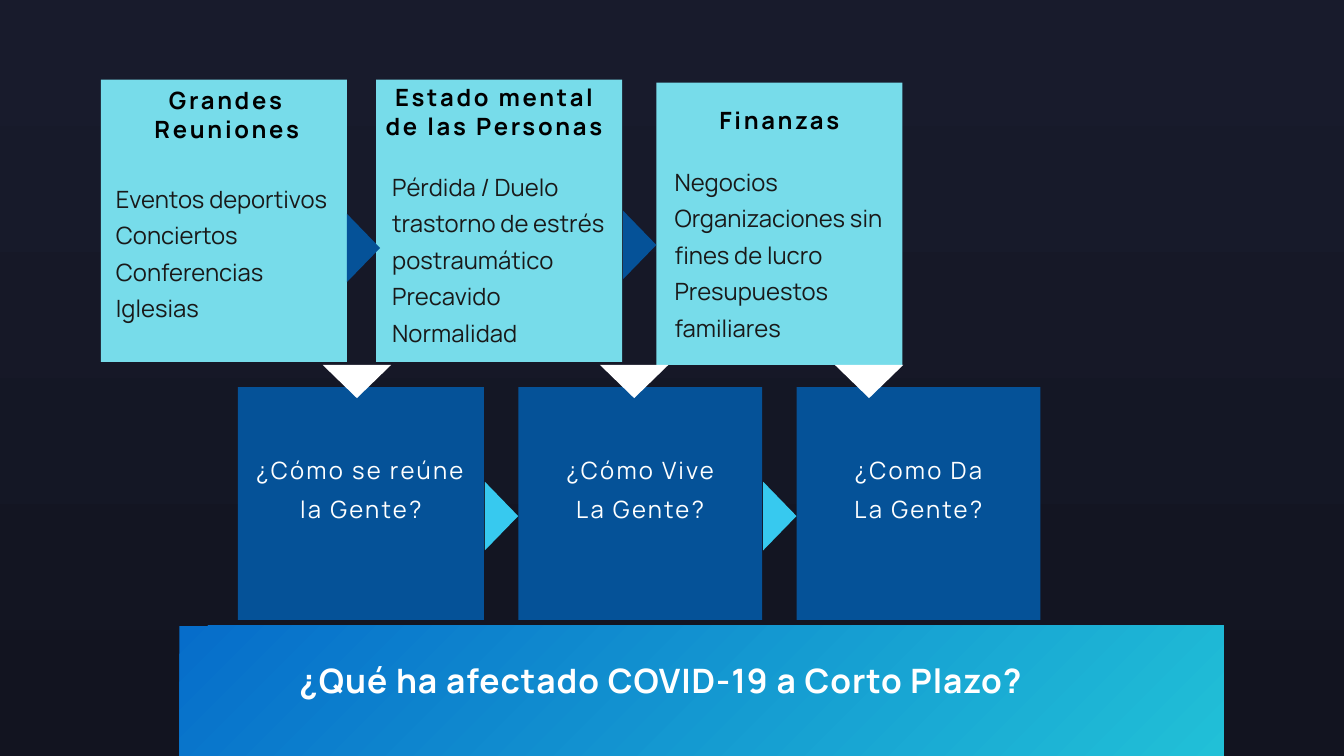
from pptx import Presentation
from pptx.dml.color import RGBColor
from pptx.enum.shapes import MSO_SHAPE
from pptx.enum.text import MSO_ANCHOR, PP_ALIGN
from pptx.util import Inches, Pt

CARD, STEP, ARROW = "77DCEA", "055298", "37C9EF"
WHITE, BLACK, INK = "FFFFFF", "000000", "191919"


def paint(fill, *colors, angle=0):
    """Fill with one colour, or with a two-colour gradient (counter-clockwise angle)."""
    if len(colors) == 1:
        fill.solid()
        fill.fore_color.rgb = RGBColor.from_string(colors[0])
        return
    fill.gradient()
    fill.gradient_angle = angle
    for stop, color in zip(fill.gradient_stops, colors):
        stop.color.rgb = RGBColor.from_string(color)


def write(box, place, lines, color, size=17, bold=False, tracking=0,
          spacing=None, align=PP_ALIGN.LEFT, margins=(0, 0)):
    """Place a text shape and set one paragraph per line; tracking is in points."""
    box.left, box.top, box.width, box.height = [Inches(value) for value in place]
    frame = box.text_frame
    frame.word_wrap = True
    frame.vertical_anchor = MSO_ANCHOR.TOP
    frame.margin_left = frame.margin_right = Inches(margins[0])
    frame.margin_top = frame.margin_bottom = Inches(margins[1])
    frame.text = "\n".join(lines)
    for para in frame.paragraphs:
        para.alignment = align
        para.space_before = Pt(0)
        if spacing:
            para.line_spacing = Pt(spacing)
        font = para.font
        font.name, font.size, font.bold = "Manrope", Pt(size), bold
        font.color.rgb = RGBColor.from_string(color)
        if tracking:
            font._rPr.set("spc", str(round(tracking * 100)))


deck = Presentation()
deck.slide_width, deck.slide_height = Inches(13.33), Inches(7.5)
page = deck.slides.add_slide(deck.slide_layouts[5])
shapes = page.shapes
paint(page.background.fill, "181B2C", "121420", angle=270)

# Panels: three cards, three steps and the banner
panels = [(left, top, 2.44, 2.8, [CARD]) for left, top in ((1, 0.79), (3.73, 0.79), (6.51, 0.82))]
panels += [(left, 3.84, width, 2.31, [STEP]) for left, width in ((2.36, 2.44), (5.14, 2.42), (7.9, 2.42))]
panels.append((1.78, 6.21, 10.36, 1.29, ["066DCA", "21C0D7"]))
for left, top, width, height, colors in panels:
    panel = shapes.add_shape(MSO_SHAPE.RECTANGLE, Inches(left), Inches(top), Inches(width), Inches(height))
    panel.shadow.inherit = False
    panel.line.fill.background()
    paint(panel.fill, *colors, angle=315)

# Pointers, given by their tips
right_tips = [(3.77, 2.46, STEP), (6.51, 2.43, STEP), (5.14, 5.12, ARROW), (7.9, 5.12, ARROW)]
pointers = [([(x - 0.33, y - 0.34), (x, y), (x - 0.33, y + 0.34)], color) for x, y, color in right_tips]
pointers += [([(x - 0.34, 3.62), (x + 0.34, 3.62), (x, 3.95)], WHITE) for x in (3.54, 6.29, 8.62)]
for corners, color in pointers:
    points = [(Inches(x), Inches(y)) for x, y in corners]
    builder = shapes.build_freeform(*points[0])
    builder.add_line_segments(points[1:], close=True)
    pointer = builder.convert_to_shape()
    pointer.shadow.inherit = False
    pointer.line.fill.background()
    paint(pointer.fill, color)

heading = dict(color=BLACK, bold=True, tracking=1.9, align=PP_ALIGN.CENTER)
items = dict(color=INK, spacing=26.1)
question = dict(color=WHITE, tracking=1.6, spacing=28.1, align=PP_ALIGN.CENTER)
texts = [
    ((1.15, 0.85, 2.2, 0.57), ["Grandes Reuniones"], heading),
    ((3.69, 0.82, 2.42, 0.57), ["Estado mental", "de las Personas"], heading),
    ((6.51, 0.85, 2.44, 0.43), ["Finanzas"], heading | {"spacing": 34.6}),
    ((1.15, 1.75, 2.2, 1.42),
     ["Eventos deportivos", "Conciertos", "Conferencias", "Iglesias"], items),
    ((3.89, 1.63, 2.16, 1.79),
     ["Pérdida / Duelo", "trastorno de estrés postraumático", "Precavido", "Normalidad"], items),
    ((6.69, 1.58, 2.22, 1.8),
     ["Negocios", "Organizaciones sin fines de lucro", "Presupuestos familiares"], items),
    ((2.42, 4.41, 2.32, 0.75), ["¿Cómo se reúne la Gente?"], question),
    ((5.27, 4.41, 2.16, 0.75), ["¿Cómo Vive", "La Gente?"], question),
    ((8.03, 4.41, 2.16, 0.75), ["¿Como Da", "La Gente?"], question),
]
for place, lines, style in texts:
    write(shapes.add_textbox(0, 0, 0, 0), place, lines, **style)

# The title stands in front of the banner
title = shapes.title
shapes._spTree.append(title._element)
write(title, (2.87, 6.5, 8.17, 0.48), ["¿Qué ha afectado COVID-19 a Corto Plazo?"], WHITE,
      size=24, bold=True, tracking=0.7, spacing=28.8, margins=(0.1, 0.05))

deck.save("out.pptx")
